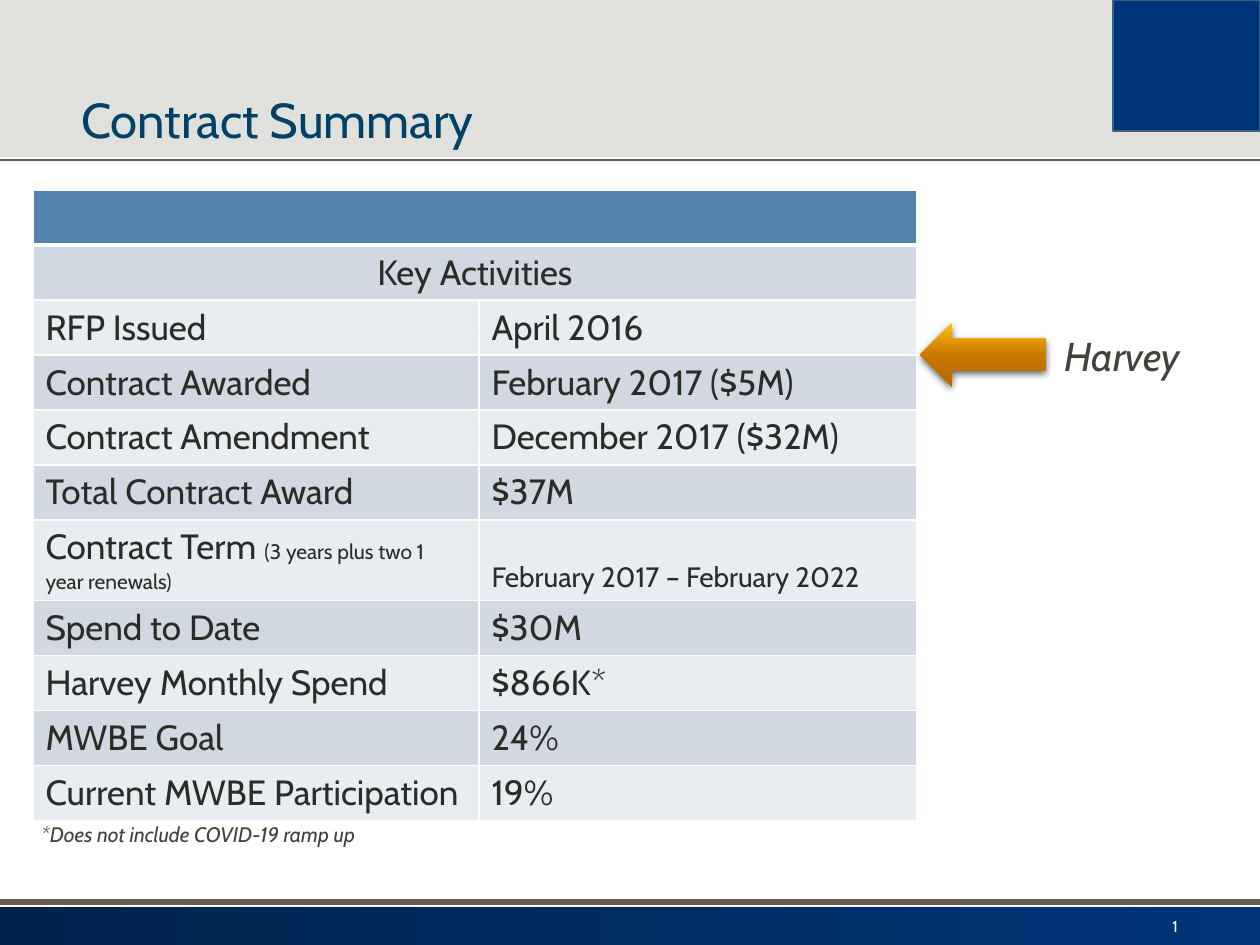
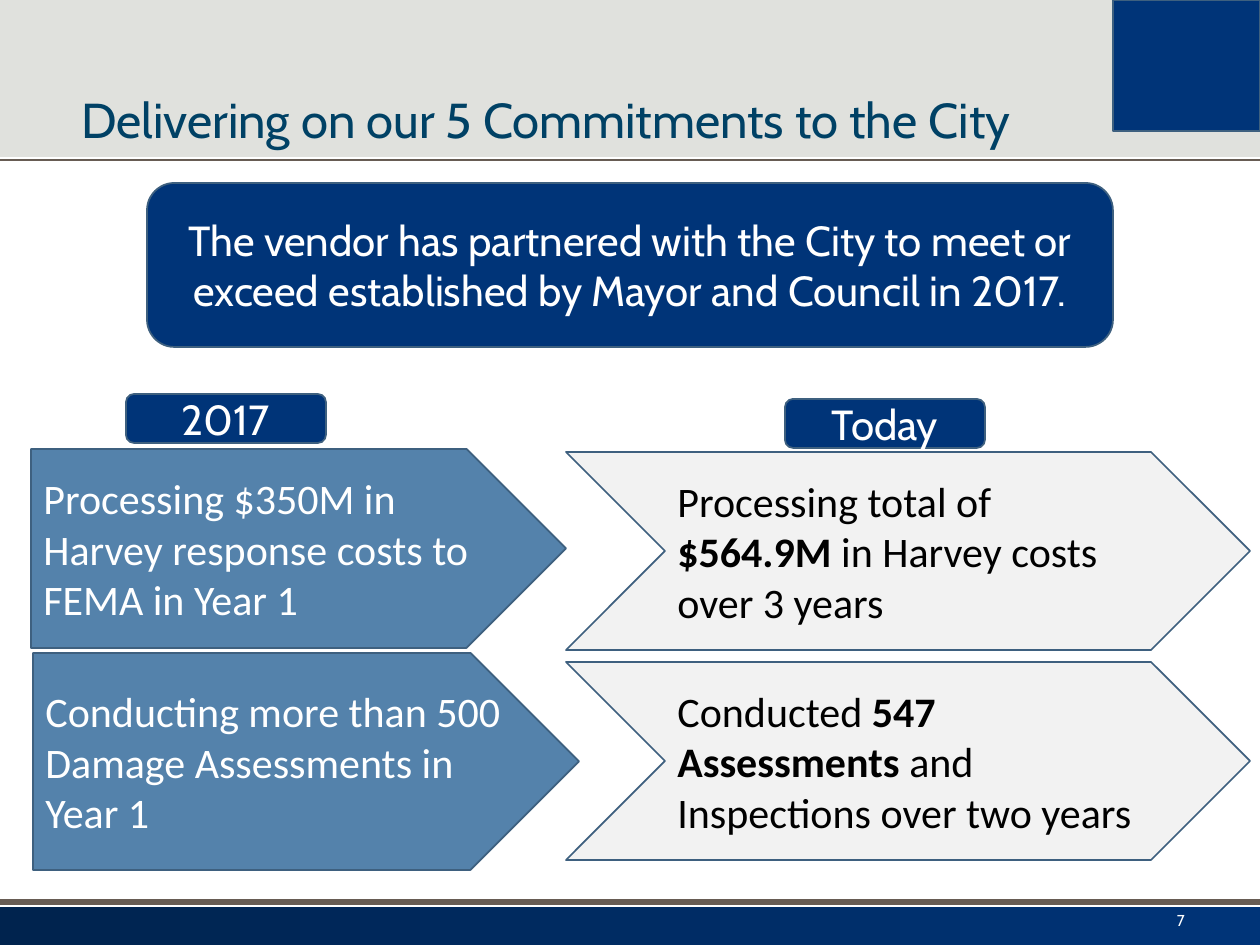
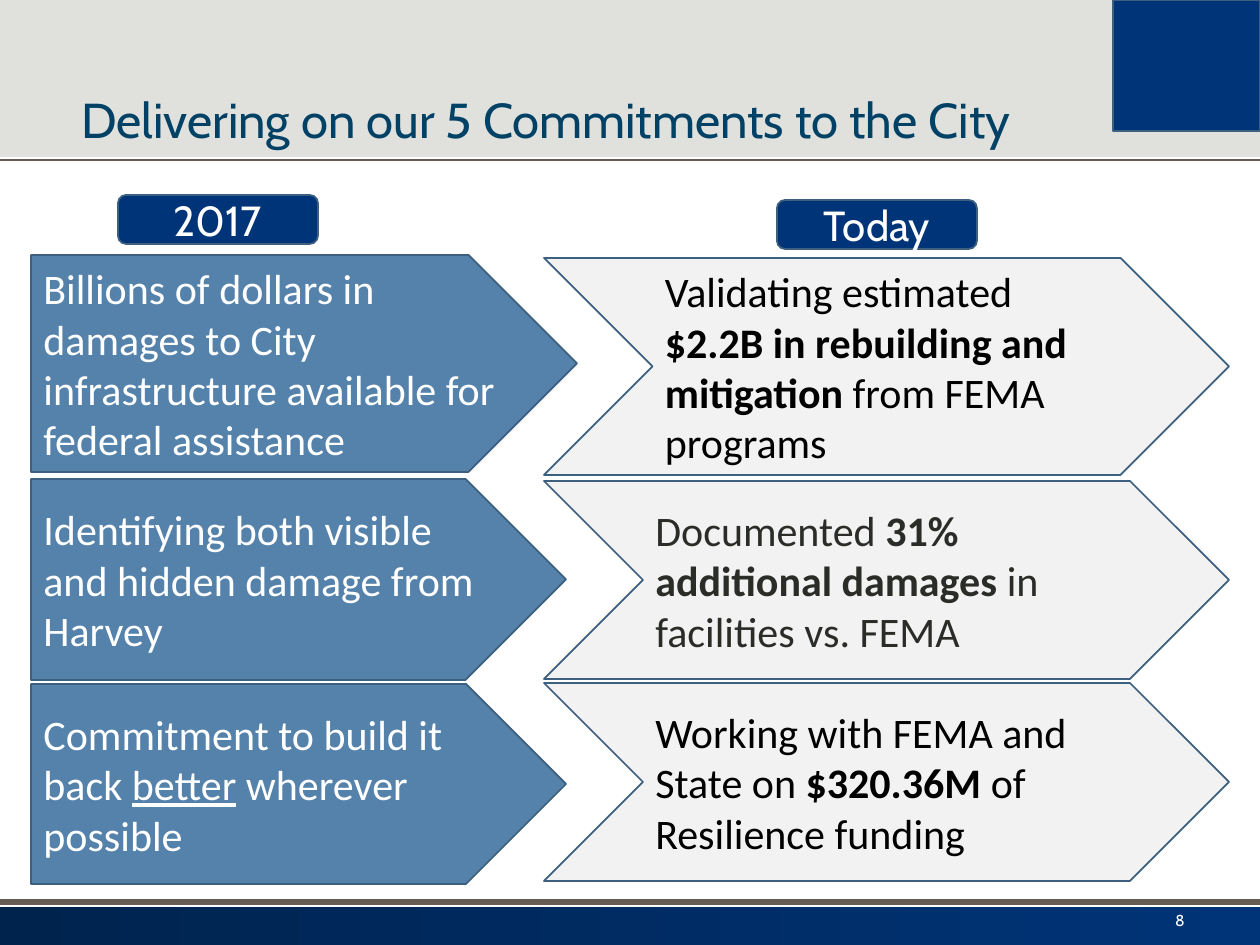
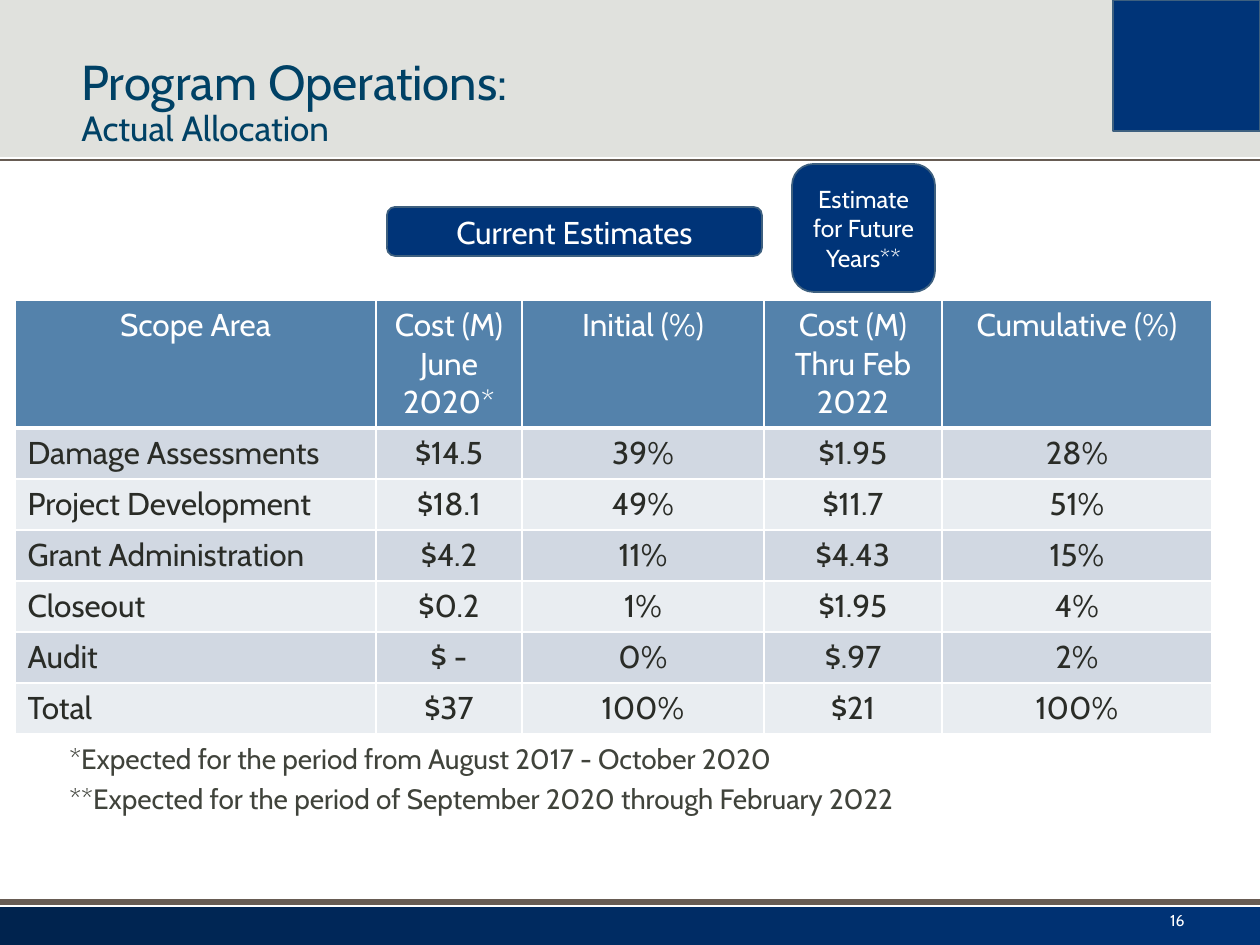
from dataclasses import dataclass
from lxml.etree import SubElement as Sub
from pptx import Presentation
from pptx.dml.color import RGBColor as Rgb
from pptx.enum.shapes import MSO_CONNECTOR as Wire, MSO_SHAPE as Form
from pptx.enum.text import MSO_ANCHOR as Anchor, PP_ALIGN as Align
from pptx.oxml.ns import qn
from pptx.util import Emu, Pt


@dataclass(frozen=True)
class Theme:
    head: str = "Cabin"
    body: str = "Calibri"
    navy: str = "003478"
    night: str = "00234E"
    steel: str = "5482AB"
    edge: str = "3E607F"
    band: str = "E0E1DD"
    rule: str = "675C53"
    title: str = "004165"
    ink: str = "2A2C27"
    note: str = "40433B"
    pale: str = "F2F2F2"
    white: str = "FFFFFF"
    black: str = "000000"
    rows: tuple = ("E9EDF1", "D1D8E2")
    glow: tuple = ((0, "FFC000"), (50, "CA7700"), (100, "B46A00"))
    big: int = 28
    large: int = 24
    call: int = 23
    cell: int = 20
    mid: int = 18
    foot: int = 16
    small: int = 14
    tiny: int = 12
    page: int = 9


T = Theme()
SCALE = 914400 / 126
WIDE, HIGH = 1260, 945
PAGE = (914, 898, 283, 45)


def px(num):
    return Emu(round(num * SCALE))


def place(box):
    return [px(num) for num in box]


def tint(color):
    return Rgb.from_string(color)


def write(frame, parts, size, color, font=T.head, align=None,
          italic=False, mark=("bold", True)):
    first, *rest = [parts] if isinstance(parts, str) else parts
    frame.text = first
    last = frame.paragraphs[-1]
    for part in rest:
        last.add_run().text = part
    for para in frame.paragraphs:
        para.alignment = align
        for run in para.runs:
            face = run.font
            face.name, face.size = font, Pt(size)
            face.bold, face.italic = False, italic
            face.color.rgb = tint(color)
    for run in last.runs[1::2]:
        setattr(run.font, *mark)


def shape(slide, form, box, fill=None, line=None):
    item = slide.shapes.add_shape(form, *place(box))
    item.shadow.inherit = False
    if fill:
        item.fill.solid()
        item.fill.fore_color.rgb = tint(fill)
    else:
        item.fill.background()
    if line:
        item.line.color.rgb = tint(line)
        item.line.width = Pt(1)
    else:
        item.line.fill.background()
    return item


def blend(item, stops, angle):
    props = item._element.spPr
    grad = Sub(props, qn("a:gradFill"))
    props.replace(props.find(qn("a:noFill")), grad)
    group = Sub(grad, qn("a:gsLst"))
    for spot, color in stops:
        stop = Sub(group, qn("a:gs"), pos=str(spot * 1000))
        Sub(stop, qn("a:srgbClr"), val=color)
    Sub(grad, qn("a:lin"), ang=str(angle * 60000), scaled="0")


def shade(item):
    glow = item._element.spPr.find(qn("a:effectLst"))
    drop = Sub(glow, qn("a:outerShdw"), blurRad=str(Pt(4.5)),
               dist=str(Pt(1.5)), dir="5400000", rotWithShape="0")
    color = Sub(drop, qn("a:srgbClr"), val=T.black)
    Sub(color, qn("a:alpha"), val="63000")


def rule(slide, y, width):
    wire = slide.shapes.add_connector(
        Wire.STRAIGHT, *place((0, y, WIDE, y)))
    wire.line.color.rgb = tint(T.rule)
    wire.line.width = Pt(width)
    Sub(wire._element.spPr, qn("a:effectLst"))


def label(slide, box, parts, size, color, anchor=Anchor.TOP, **look):
    frame = slide.shapes.add_textbox(*place(box)).text_frame
    frame.word_wrap = True
    frame.vertical_anchor = anchor
    write(frame, parts, size, color, **look)
    return frame


def badge(slide, box, text, size=T.large):
    item = shape(slide, Form.ROUNDED_RECTANGLE, box, T.navy, T.edge)
    item.text_frame.vertical_anchor = Anchor.MIDDLE
    write(item.text_frame, text, size, T.white, align=Align.CENTER)


def step(slide, form, box, parts, fill, color, mark):
    item = shape(slide, form, box, fill, T.edge)
    item.text_frame.vertical_anchor = Anchor.MIDDLE
    write(item.text_frame, parts, T.large, color, T.body, Align.LEFT,
          mark=mark)


def plate(slide, box, parts):
    step(slide, Form.PENTAGON, box, parts, T.steel, T.white,
         ("underline", True))


def wedge(slide, box, parts, color=T.black):
    step(slide, Form.CHEVRON, box, parts, T.pale, color, ("bold", True))


def border(cell, top, base):
    props = cell._tc.get_or_add_tcPr()
    sides = (("L", 1), ("R", 1), ("T", top), ("B", base))
    for spot, (side, width) in enumerate(sides):
        line = Sub(props, qn(f"a:ln{side}"), w=str(Pt(width)))
        fill = Sub(line, qn("a:solidFill"))
        Sub(fill, qn("a:srgbClr"), val=T.white)
        props.insert(spot, line)


def grid(slide, left, top, cols, rows, data, size, align):
    box = (left, top, sum(cols), sum(rows))
    table = slide.shapes.add_table(
        len(rows), len(cols), *place(box)).table
    table.horz_banding = False
    for col, width in zip(table.columns, cols):
        col.width = px(width)
    for i, (row, height) in enumerate(zip(table.rows, rows)):
        row.height = px(height)
        for j, (cell, parts) in enumerate(zip(row.cells, data[i])):
            cell.fill.solid()
            cell.fill.fore_color.rgb = tint(T.rows[i % 2] if i else T.steel)
            border(cell, 3 if i == 1 else 1, 1 if i else 3)
            side = Align.CENTER if i == 0 else align if j else Align.LEFT
            write(cell.text_frame, parts, size, T.ink if i else T.white,
                  align=side, mark=("size", Pt(T.tiny)))
    return table


def start(deck, title, page, width=897):
    slide = deck.slides.add_slide(deck.slide_layouts[6])
    foot = shape(slide, Form.RECTANGLE, (0, 907, WIDE, 38))
    blend(foot, ((0, T.night), (100, T.navy)), 0)
    shape(slide, Form.RECTANGLE, (0, 0, WIDE, 157), T.band)
    rule(slide, 160, 1)
    rule(slide, 902, 3)
    shape(slide, Form.RECTANGLE, (1113, 0, 147, 131), T.navy, T.edge)
    frame = label(slide, (69, 21, width, 134), title, T.big, T.title,
                  Anchor.BOTTOM, mark=("size", Pt(T.cell)))
    frame.paragraphs[0].line_spacing = 0.9
    if page == "1":
        label(slide, (1160, 911, 58, 32), page, T.page, T.white)
    else:
        label(slide, PAGE, page, T.page, T.white, Anchor.MIDDLE,
              align=Align.RIGHT)
    return slide


def heads(slide, left, top):
    badge(slide, (left, top, 200, 49), "2017")
    badge(slide, (left + 659, top + 5, 200, 49), "Today")


def contract(deck):
    slide = start(deck, "Contract Summary", "1")
    data = [
        ("", ""),
        ("Key Activities", ""),
        ("RFP Issued", "April 2016"),
        ("Contract Awarded", "February 2017 ($5M)"),
        ("Contract Amendment", "December 2017 ($32M)"),
        ("Total Contract Award", "$37M"),
        (("Contract Term ", "(3 years plus two 1 year renewals)"), ""),
        ("Spend to Date", "$30M"),
        ("Harvey Monthly Spend", "$866K*"),
        ("MWBE Goal", "24%"),
        ("Current MWBE Participation", "19%"),
    ]
    rows = [81 if i == 6 else 55 for i in range(len(data))]
    table = grid(slide, 33, 190, (446, 438), rows, data, T.cell, Align.LEFT)
    for i in range(2):
        table.cell(i, 0).merge(table.cell(i, 1))
    table.cell(1, 0).text_frame.paragraphs[0].alignment = Align.CENTER
    term = table.cell(6, 1)
    term.vertical_anchor = Anchor.BOTTOM
    write(term.text_frame, "February 2017 – February 2022", T.foot, T.ink)
    arrow = shape(slide, Form.LEFT_ARROW, (920, 323, 126, 64))
    blend(arrow, T.glow, 90)
    shade(arrow)
    label(slide, (1018, 325, 209, 62), "Harvey", T.call, T.note,
          align=Align.CENTER, italic=True)
    label(slide, (29, 815, 893, 38), "*Does not include COVID-19 ramp up",
          T.tiny, T.note, italic=True)


def pledge(deck, page):
    return start(deck, "Delivering on our 5 Commitments to the City",
                 page, 1000)


def costs(deck):
    slide = pledge(deck, "7")
    plate(slide, (31, 449, 535, 199),
          "Processing $350M in Harvey response costs to FEMA in Year 1")
    plate(slide, (33, 653, 546, 217),
          "Conducting more than 500 Damage Assessments in Year 1")
    wedge(slide, (566, 452, 684, 198),
          ("Processing total of ", "$564.9M ",
           "in Harvey costs over 3 years"))
    wedge(slide, (566, 662, 684, 198),
          ("Conducted ", "547 Assessments",
           " and Inspections over two years"))
    badge(slide, (147, 183, 966, 164),
          "The vendor has partnered with the City to meet or exceed "
          "established by Mayor and Council in 2017.")
    heads(slide, 126, 394)


def repair(deck):
    slide = pledge(deck, "8")
    plate(slide, (31, 255, 546, 217),
          "Billions of dollars in damages to City infrastructure "
          "available for federal assistance")
    plate(slide, (31, 479, 535, 201),
          "Identifying both visible and hidden damage from Harvey")
    plate(slide, (31, 684, 535, 200),
          ("Commitment to build it back ", "better", " wherever possible"))
    wedge(slide, (544, 258, 685, 217),
          ("Validating estimated ", "$2.2B in rebuilding and mitigation ",
           "from FEMA programs"))
    wedge(slide, (544, 481, 685, 198),
          ("Documented ", "31% additional damages ",
           "in facilities vs. FEMA"), T.ink)
    wedge(slide, (544, 683, 685, 198),
          ("Working with FEMA and State on ", "$320.36M ",
           "of Resilience funding"))
    heads(slide, 118, 195)


def budget(deck):
    slide = start(deck, ("Program Operations:\v", "Actual Allocation"), "16")
    data = [
        ("Scope Area", "Cost (M)\nJune 2020*", "Initial (%)",
         "Cost (M)\nThru Feb 2022", "Cumulative (%)"),
        ("Damage Assessments", "$14.5", "39%", "$1.95", "28%"),
        ("Project Development", "$18.1", "49%", "$11.7", "51%"),
        ("Grant Administration", "$4.2", "11%", "$4.43", "15%"),
        ("Closeout", "$0.2", "1%", "$1.95", "4%"),
        ("Audit", "$ -", "0%", "$.97", "2%"),
        ("Total", "$37", "100%", "$21", "100%"),
    ]
    grid(slide, 15, 300, (361, 146, 242, 178, 270), [128] + [51] * 6,
         data, T.mid, Align.CENTER)
    badge(slide, (387, 207, 375, 49), "Current Estimates", T.mid)
    badge(slide, (792, 164, 143, 128), "Estimate for Future Years**", T.small)
    notes = ("*Expected for the period from August 2017 - October 2020",
             "**Expected for the period of September 2020 "
             "through February 2022")
    for i, note in enumerate(notes):
        label(slide, (57, 735 + 40 * i, 920, 47), note, T.foot, T.note)


def main():
    deck = Presentation()
    deck.slide_width, deck.slide_height = px(WIDE), px(HIGH)
    contract(deck)
    costs(deck)
    repair(deck)
    budget(deck)
    deck.save("out.pptx")


if __name__ == "__main__":
    main()
